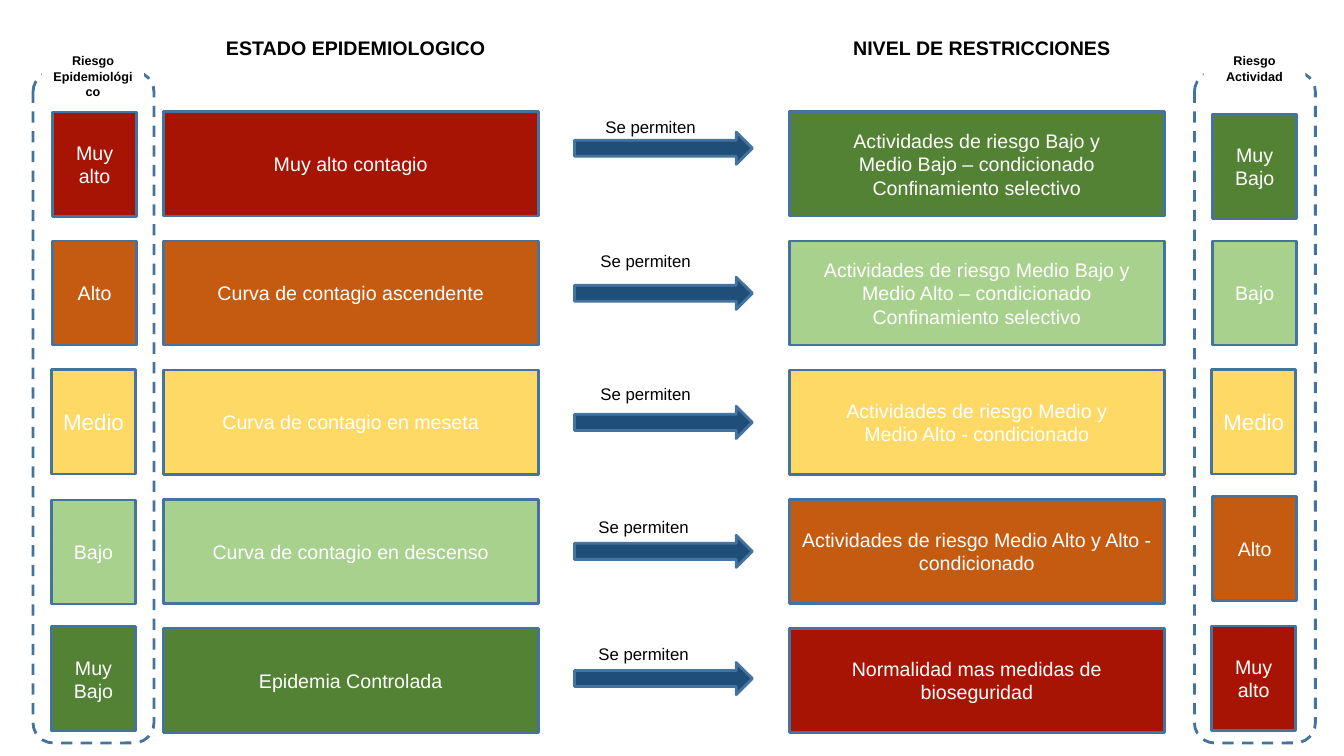
from pptx import Presentation
from pptx import util as u
from pptx.dml.color import RGBColor
from pptx.enum import dml, shapes, text

COLORS = {
    "red": "A81404", "orange": "C55A11", "yellow": "FFD966",
    "light": "A9D18E", "green": "548235", "arrow": "1F4E79",
    "line": "43739E", "white": "FFFFFF", "black": "000000",
}


class Board:
    """Holds the slide, its font and its colours."""

    font = "Arial"

    def __init__(self, slide):
        self.s = slide

    def color(self, name):
        return RGBColor.from_string(COLORS[name])

    def set_text(self, sp, content, size, color, bold=False):
        tf = sp.text_frame
        tf.word_wrap = True
        tf.text = content
        for p in tf.paragraphs:
            p.alignment = text.PP_ALIGN.CENTER
            p.font.name, p.font.size, p.font.bold = self.font, u.Pt(size), bold
            p.font.color.rgb = self.color(color)

    def shape(self, kind, x, y, w, h, fill=None, line="line"):
        sp = self.s.shapes.add_shape(kind, u.Pt(x), u.Pt(y), u.Pt(w), u.Pt(h))
        sp.shadow.inherit = False
        if fill:
            sp.fill.solid()
            sp.fill.fore_color.rgb = self.color(fill)
        else:
            sp.fill.background()
        if line:
            sp.line.color.rgb = self.color(line)
            sp.line.width = u.Pt(2)
        else:
            sp.line.fill.background()
        return sp

    def box(self, x, y, w, fill, content, size=14):
        sp = self.shape(shapes.MSO_SHAPE.RECTANGLE, x, y, w, 74.4, fill)
        sp.text_frame.vertical_anchor = text.MSO_ANCHOR.MIDDLE
        self.set_text(sp, content, size, "white")

    def badge(self, x, y, fill, content):
        self.box(x, y, 60, fill, content, 16 if content == "Medio" else 14)

    def arrow(self, y):
        self.shape(shapes.MSO_SHAPE.RIGHT_ARROW, 410.4, y, 127, 23, "arrow")

    def label(self, x, y, w, h, content, size, bold=False):
        sp = self.s.shapes.add_textbox(u.Pt(x), u.Pt(y), u.Pt(w), u.Pt(h))
        self.set_text(sp, content, size, "black", bold)

    def frame(self, x, caption):
        sp = self.shape(shapes.MSO_SHAPE.ROUNDED_RECTANGLE, x, 51.2, 86.4, 479.5)
        sp.line.dash_style = dml.MSO_LINE.DASH
        sp = self.shape(shapes.MSO_SHAPE.RECTANGLE, x + 6.5, 34.6, 72.7, 28.8,
                        "white", None)
        sp.text_frame.vertical_anchor = text.MSO_ANCHOR.TOP
        self.set_text(sp, caption, 9, "black", True)


# Per row: colour, risk level, epidemic state
STATES = [
    ("red", "Muy alto", "Muy alto contagio"),
    ("orange", "Alto", "Curva de contagio ascendente"),
    ("yellow", "Medio", "Curva de contagio en meseta"),
    ("light", "Bajo", "Curva de contagio en descenso"),
    ("green", "Muy\nBajo", "Epidemia Controlada"),
]
RESTRICTIONS = [
    "Actividades de riesgo Bajo y\nMedio Bajo – condicionado\nConfinamiento selectivo",
    "Actividades de riesgo Medio Bajo y Medio Alto – condicionado\nConfinamiento selectivo",
    "Actividades de riesgo Medio y\nMedio Alto - condicionado",
    "Actividades de riesgo Medio Alto y Alto - condicionado",
    "Normalidad mas medidas de bioseguridad",
]
# Per row: left badge (x, y), right badge (x, y), arrow y, caption (x, y)
PLACES = [
    ((37.6, 80), (866.2, 81.4), 94.4, (411.1, 80)),
    ((37.6, 172.1), (866.2, 172.1), 198, (407.5, 175.7)),
    ((36.8, 264.2), (865.5, 264.2), 290.2, (407.5, 270.7)),
    ((36.8, 357.1), (866.2, 354.8), 382.3, (406.1, 365.8)),
    ((36.8, 447.8), (865.5, 447.2), 473.2, (406.1, 456.5)),
]
STATE_X, RESTRICTION_X, BOX_W = 116.6, 563.8, 268
TOP, PITCH = 79.9, 92.2


def main():
    prs = Presentation()
    prs.slide_width, prs.slide_height = u.Pt(960), u.Pt(540)
    board = Board(prs.slides.add_slide(prs.slide_layouts[6]))

    # Column headings
    board.label(STATE_X, 22.3, 275, 28.8, "ESTADO EPIDEMIOLOGICO", 14, True)
    board.label(RESTRICTION_X, 22.3, 275, 28.8, "NIVEL DE RESTRICCIONES", 14, True)

    # Rows: the activity risk runs opposite to the epidemic risk
    rows = zip(STATES, reversed(STATES), RESTRICTIONS, PLACES)
    for i, (state, activity, restriction, place) in enumerate(rows):
        y = TOP + i * PITCH
        left, right, arrow_y, caption = place
        board.box(STATE_X, y, BOX_W, state[0], state[2])
        board.box(RESTRICTION_X, y, BOX_W, activity[0], restriction)
        board.badge(*left, *state[:2])
        board.badge(*right, *activity[:2])
        board.arrow(arrow_y)
        board.label(*caption, 107.3, 21.8, "Se permiten", 12)

    # Dashed frames around the risk columns
    board.frame(23.6, "Riesgo Epidemiológico")
    board.frame(853.2, "Riesgo Actividad")

    prs.save("out.pptx")


if __name__ == "__main__":
    main()
